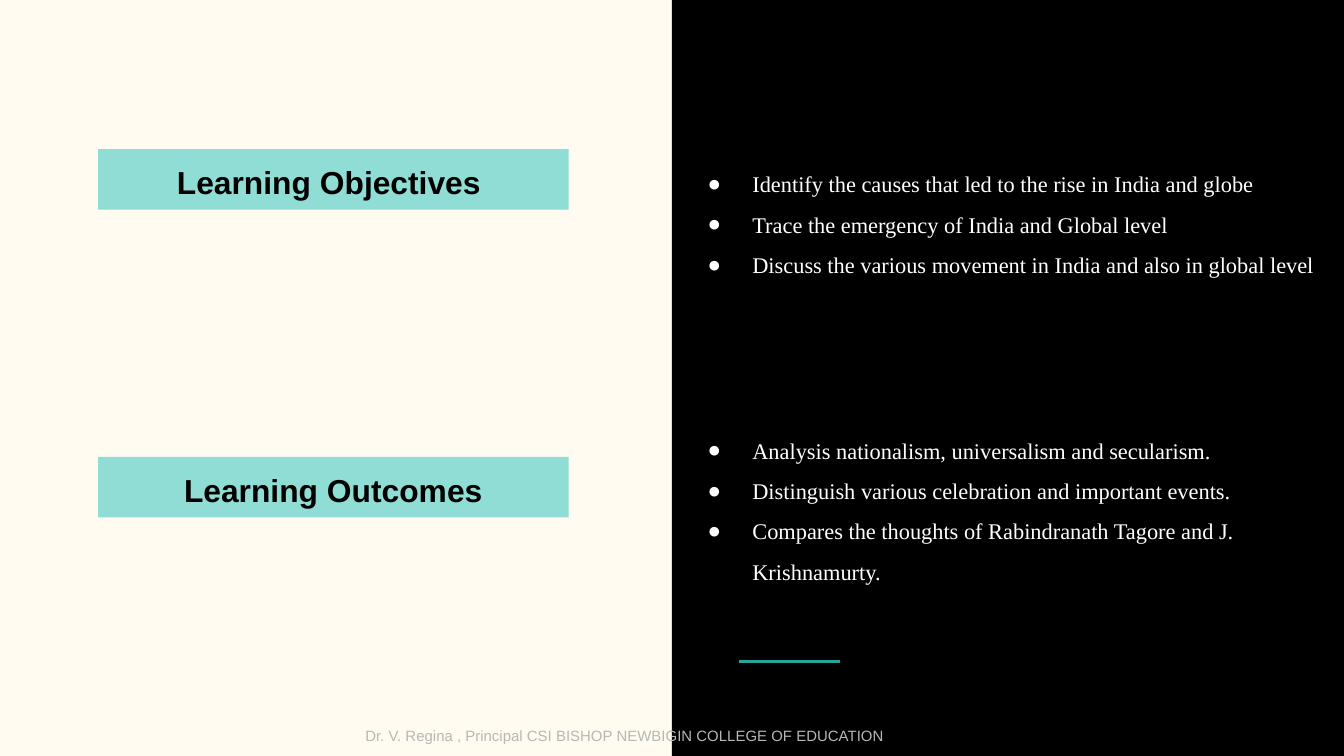
from dataclasses import dataclass

from lxml import etree
from pptx import Presentation
from pptx.dml.color import RGBColor
from pptx.enum import shapes, text
from pptx.oxml import ns
from pptx.util import Pt


@dataclass(frozen=True)
class Theme:
    paper: str = "FFFBF0"
    panel: str = "000000"
    accent: str = "26A69A"
    label: str = "90DDD6"
    label_text: str = "000000"
    list_text: str = "FFFFFF"
    footer_text: str = "B7B7B7"
    sans: str = "Arial"
    serif: str = "Times New Roman"
    label_size: int = 17
    list_size: int = 12
    footer_size: int = 8


THEME = Theme()
WIDTH, HEIGHT = 720, 405
HALF = WIDTH / 2
INSET = 7.2

SECTIONS = [
    ("Learning Objectives ", 79.9, 77, 94.3, [
        "Identify the causes that led to the rise in India and globe",
        "Trace the emergency of India and Global level",
        "Discuss the various movement in India and also in global level",
    ]),
    ("Learning Outcomes", 244.8, 219.6, 118, [
        "Analysis nationalism, universalism and secularism.",
        "Distinguish various celebration and important events.",
        "Compares the thoughts of Rabindranath Tagore and J. Krishnamurty.",
    ]),
]
FOOTER = "Dr. V. Regina , Principal CSI BISHOP NEWBIGIN COLLEGE OF EDUCATION"


def rgb(color):
    return RGBColor.from_string(color)


def add_block(s, x, y, w, h, fill):
    sp = s.shapes.add_shape(shapes.MSO_SHAPE.RECTANGLE, Pt(x), Pt(y), Pt(w), Pt(h))
    sp.shadow.inherit = False
    sp.fill.solid()
    sp.fill.fore_color.rgb = rgb(fill)
    sp.line.fill.background()
    return sp


def add_rule(s, x1, x2, y):
    line = s.shapes.add_connector(
        shapes.MSO_CONNECTOR.STRAIGHT, Pt(x1), Pt(y), Pt(x2), Pt(y))
    line.line.color.rgb = rgb(THEME.accent)
    line.line.width = Pt(1.5)
    etree.SubElement(line._element.spPr, ns.qn("a:effectLst"))


def prepare_frame(sp):
    tf = sp.text_frame
    tf.word_wrap = True
    tf.vertical_anchor = text.MSO_ANCHOR.TOP
    tf.margin_left = tf.margin_right = tf.margin_top = tf.margin_bottom = Pt(INSET)
    return tf


def add_run(p, words, font, size, color, bold=False):
    r = p.add_run()
    r.text = words
    r.font.name = font
    r.font.size = Pt(size)
    r.font.bold = bold
    r.font.color.rgb = rgb(color)


def set_bullet(p):
    props = p._p.get_or_add_pPr()
    props.set("marL", str(Pt(36)))
    props.set("indent", str(Pt(-24)))
    color = etree.SubElement(props, ns.qn("a:buClr"))
    etree.SubElement(color, ns.qn("a:srgbClr"), val=THEME.list_text)
    etree.SubElement(props, ns.qn("a:buFont"), typeface=THEME.serif)
    etree.SubElement(props, ns.qn("a:buChar"), char="●")


def add_label(s, y, words):
    tf = prepare_frame(add_block(s, 52.6, y, 252, 32.4, THEME.label))
    p = tf.paragraphs[0]
    p.alignment = text.PP_ALIGN.CENTER
    add_run(p, words, THEME.sans, THEME.label_size, THEME.label_text, bold=True)


def add_list(s, y, h, items):
    tf = prepare_frame(s.shapes.add_textbox(Pt(HALF), Pt(y), Pt(HALF), Pt(h)))
    for i, item in enumerate(items):
        p = tf.add_paragraph() if i else tf.paragraphs[0]
        p.line_spacing = 1.5
        set_bullet(p)
        add_run(p, item, THEME.serif, THEME.list_size, THEME.list_text)


def add_footer(s):
    tf = prepare_frame(s.shapes.add_textbox(Pt(188.6), Pt(384.5), Pt(392.4), Pt(20.2)))
    add_run(tf.paragraphs[0], FOOTER, THEME.sans, THEME.footer_size, THEME.footer_text)


def main():
    prs = Presentation()
    prs.slide_width, prs.slide_height = Pt(WIDTH), Pt(HEIGHT)
    s = prs.slides.add_slide(prs.slide_layouts[6])
    s.background.fill.solid()
    s.background.fill.fore_color.rgb = rgb(THEME.paper)

    add_block(s, HALF, 0, HALF, HEIGHT, THEME.panel)
    add_rule(s, 396, 450, 354.2)
    for title, label_y, _, _, _ in SECTIONS:
        add_label(s, label_y, title)
    for _, _, list_y, list_h, items in SECTIONS:
        add_list(s, list_y, list_h, items)
    add_footer(s)
    prs.save("out.pptx")


if __name__ == "__main__":
    main()
